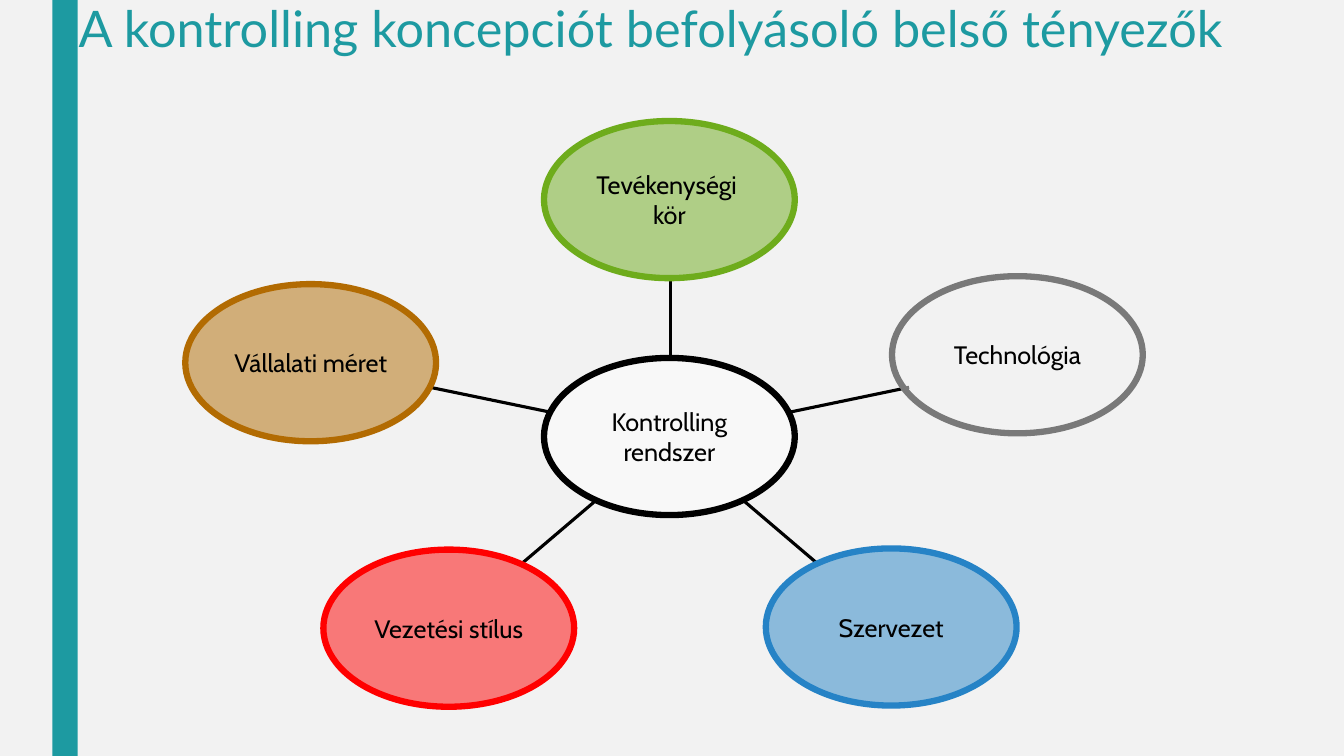
from pptx import Presentation
from pptx.dml.color import RGBColor
from pptx.enum.shapes import MSO_CONNECTOR as CONN, MSO_SHAPE as SHAPE
from pptx.enum.text import MSO_ANCHOR as ANCHOR, PP_ALIGN as ALIGN
from pptx.oxml.ns import qn
from pptx.util import Cm, Pt
from lxml.etree import SubElement

TEAL, BLACK = "1D9AA1", "000000"
OVAL_W, OVAL_H = 6.32, 3.96
CENTRE = (9.04, 5.97, "FFFFFF", BLACK, ["Kontrolling", "rendszer"])
FACTORS = [
    (0, 4.11, "B26B02", "B26B02", ["Vállalati méret"]),
    (3.48, 10.8, "FF0000", "FF0000", ["Vezetési stílus"]),
    (14.63, 10.77, "2683C6", "2683C6", ["Szervezet"]),
    (9.04, 0, "6EAC1C", "6EAC1C", ["Tevékenységi ", "kör"]),
    (17.81, 3.91, "F2F2F2", "797979", ["Technológia"]),
]
SPOKES = [
    (9.22, 7.34, 6.17, 6.71),
    (10.36, 9.55, 8.48, 11.15),
    (14.05, 9.55, 15.93, 11.15),
    (15.21, 7.34, 18.24, 6.71),
    (12.22, 5.97, 12.22, 3.96),
]


def rgb(color):
    return RGBColor.from_string(color)


def set_font(p, name, size, color):
    p.font.name = name
    p.font.size = Pt(size)
    p.font.color.rgb = rgb(color)


def add_side_bar(s, x, y, w, h):
    sp = s.shapes.add_shape(SHAPE.RECTANGLE, Cm(x), Cm(y), Cm(w), Cm(h))
    sp.shadow.inherit = False
    sp.fill.solid()
    sp.fill.fore_color.rgb = rgb(TEAL)
    sp.line.fill.background()


def add_title(s, x, y, w, h, text):
    tf = s.shapes.add_textbox(Cm(x), Cm(y), Cm(w), Cm(h)).text_frame
    tf.word_wrap = True
    p = tf.paragraphs[0]
    p.text = text
    p.line_spacing = 0.89
    set_font(p, "Lato", 36, TEAL)


def add_spoke(s, x1, y1, x2, y2):
    line = s.shapes.add_connector(CONN.STRAIGHT, Cm(x1), Cm(y1), Cm(x2), Cm(y2))
    line.line.color.rgb = rgb(BLACK)
    line.line.width = Pt(2.25)
    SubElement(line._element.spPr, qn("a:effectLst"))


def add_oval(s, x, y, fill, border, lines):
    sp = s.shapes.add_shape(SHAPE.OVAL, Cm(x), Cm(y), Cm(OVAL_W), Cm(OVAL_H))
    sp.shadow.inherit = False
    sp.fill.solid()
    sp.fill.fore_color.rgb = rgb(fill)
    color = sp._element.spPr.find(qn("a:solidFill"))[0]
    SubElement(color, qn("a:alpha"), val="50000")
    sp.line.color.rgb = rgb(border)
    sp.line.width = Pt(4.5)
    tf = sp.text_frame
    tf.word_wrap = False
    tf.vertical_anchor = ANCHOR.MIDDLE
    for i, text in enumerate(lines):
        p = tf.add_paragraph() if i else tf.paragraphs[0]
        p.text = text
        p.alignment = ALIGN.CENTER
        set_font(p, "Cabin", 18, BLACK)


def add_factor_diagram(s, x, y):
    for x1, y1, x2, y2 in SPOKES:
        add_spoke(s, x + x1, y + y1, x + x2, y + y2)
    for dx, dy, fill, border, lines in [CENTRE, *FACTORS]:
        add_oval(s, x + dx, y + dy, fill, border, lines)


def main():
    prs = Presentation()
    prs.slide_width, prs.slide_height = Cm(33.87), Cm(19.05)
    s = prs.slides.add_slide(prs.slide_layouts[6])
    s.background.fill.solid()
    s.background.fill.fore_color.rgb = rgb("F2F2F2")
    add_side_bar(s, 1.32, 0, 0.64, 19.05)
    add_title(s, 1.73, 0, 30.48, 3.18,
              "A kontrolling koncepciót befolyásoló belső tényezők")
    add_factor_diagram(s, 4.67, 3.05)
    prs.save("out.pptx")


if __name__ == "__main__":
    main()
